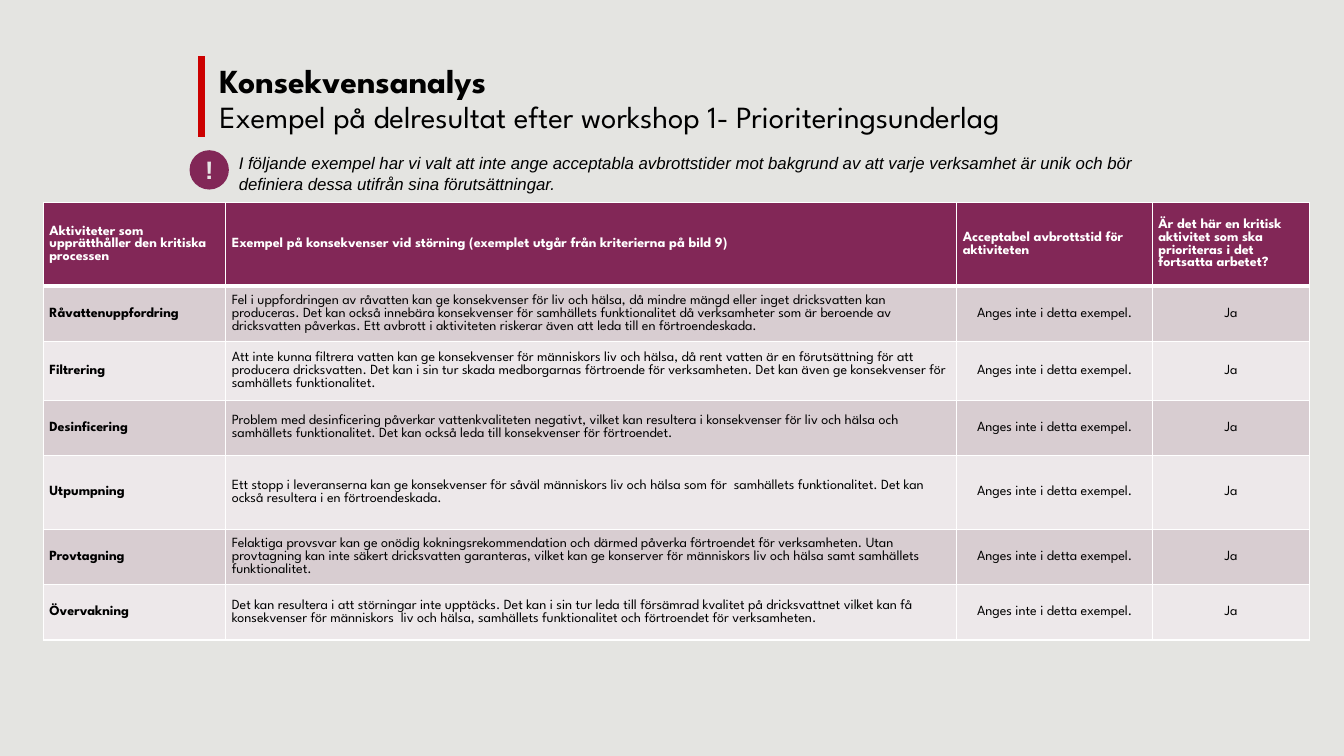
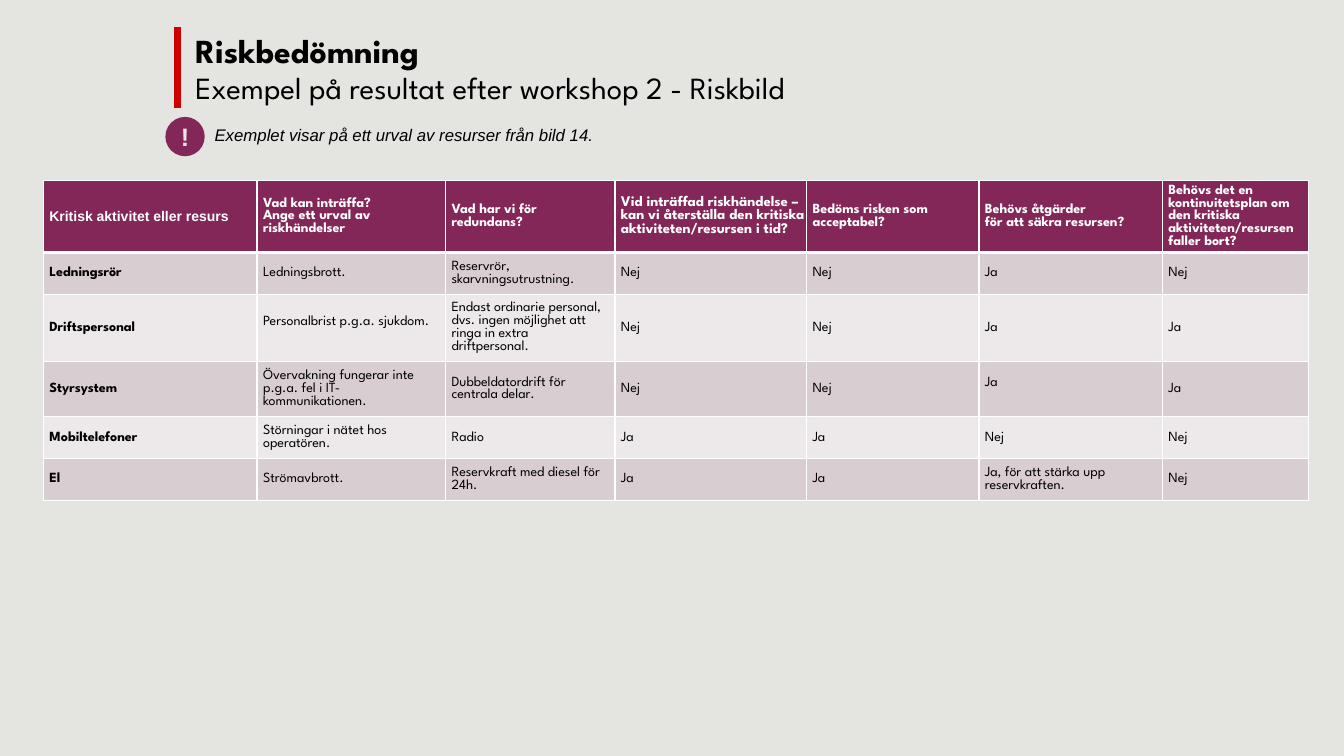
from dataclasses import dataclass
from typing import Optional

from pptx import Presentation
from pptx.dml.color import RGBColor as RGB
from pptx.enum.shapes import MSO_CONNECTOR as Conn, MSO_SHAPE as Shape
from pptx.enum.text import MSO_ANCHOR as Anchor, PP_ALIGN as Align
from pptx.oxml import parse_xml
from pptx.oxml.ns import nsdecls
from pptx.util import Inches, Pt

# Shared look
PLUM = RGB(0x82, 0x27, 0x57)
ROSE = RGB(0xD8, 0xCD, 0xD1)
PALE = RGB(0xED, 0xE8, 0xEA)
RED = RGB(0xCC, 0x00, 0x00)
GREY = RGB(0xE4, 0xE4, 0xE1)
LIGHT = RGB(0xE7, 0xE6, 0xE6)
WHITE = RGB(0xFF, 0xFF, 0xFF)
BLACK = RGB(0x00, 0x00, 0x00)
SANS = "League Spartan"
ARIAL = "Arial"


@dataclass
class Font:
    size: float
    name: str = SANS
    color: RGB = BLACK
    bold: bool = False
    italic: bool = False


HEAD = Font(10, color=WHITE, bold=True)
LABEL = Font(10, bold=True)
BODY = Font(10)
TITLE = Font(24, bold=True)
SUB = Font(22)
NOTE = Font(12, ARIAL, italic=True)
MARK = Font(18, ARIAL, LIGHT, bold=True)


@dataclass
class Top:
    x: float
    y: float
    title: str
    sub: str
    note: str
    note_y: float
    note_w: float
    mark_y: float


@dataclass
class Grid:
    y: float
    cols: list[float]
    rows: list[float]
    cells: list[list[str]]
    heads: dict[int, Font]  # header fonts that differ, by column
    mid: int  # first centred column
    lifts: set[tuple[int, int]]  # cells whose text sits higher


def style(para, font: Font) -> None:
    for run in para.runs:
        face = run.font
        face.name, face.size = font.name, Pt(font.size)
        face.bold, face.italic = font.bold, font.italic
        face.color.rgb = font.color


def add_box(slide, x: float, y: float, w: float, h: float, text: str):
    box = slide.shapes.add_textbox(Inches(x), Inches(y), Inches(w), Inches(h))
    frame = box.text_frame
    frame.word_wrap = True
    frame.text = text
    return frame


def add_top(slide, top: Top) -> None:
    # Title and subtitle
    frame = add_box(slide, top.x + 0.08, top.y + 0.03, 10.5, 0.8,
                    f"{top.title}\n{top.sub}")
    frame.vertical_anchor = Anchor.MIDDLE
    for para, font in zip(frame.paragraphs, (TITLE, SUB)):
        para.line_spacing = Pt(25)
        style(para, font)

    # Red bar
    x = Inches(top.x)
    bar = slide.shapes.add_connector(
        Conn.STRAIGHT, x, Inches(top.y), x, Inches(top.y + 0.8))
    bar.line.color.rgb = RED
    bar.line.width = Pt(5)
    bar._element.spPr.append(parse_xml(f"<a:effectLst {nsdecls('a')}/>"))

    # Note with its mark
    frame = add_box(slide, top.x + 0.27, top.note_y, top.note_w, 0.5, top.note)
    style(frame.paragraphs[0], NOTE)
    side = Inches(0.39)
    mark = slide.shapes.add_shape(
        Shape.OVAL, Inches(top.x - 0.12), Inches(top.mark_y), side, side)
    mark.shadow.inherit = False
    mark.fill.solid()
    mark.fill.fore_color.rgb = PLUM
    mark.line.fill.background()
    frame = mark.text_frame
    frame.margin_left = frame.margin_right = 0
    frame.margin_top = frame.margin_bottom = 0
    frame.vertical_anchor = Anchor.MIDDLE
    frame.text = "!"
    frame.paragraphs[0].alignment = Align.CENTER
    style(frame.paragraphs[0], MARK)


def add_edges(cell, row: int) -> None:
    widths = {"L": 1, "R": 1, "T": 3 if row == 1 else 1,
              "B": 3 if row == 0 else 1}
    props = cell._tc.get_or_add_tcPr()
    for edge, width in widths.items():
        props.append(parse_xml(
            f'<a:ln{edge} {nsdecls("a")} w="{Pt(width)}"><a:solidFill>'
            f'<a:srgbClr val="{WHITE}"/></a:solidFill></a:ln{edge}>'))


def fill_cell(cell, text: str, row: int, col: int, grid: Grid) -> None:
    is_head = row == 0
    add_edges(cell, row)
    cell.fill.solid()
    cell.fill.fore_color.rgb = PLUM if is_head else ROSE if row % 2 else PALE
    pad = 0.04 if is_head else 0.08
    lift = 0.12 if (row, col) in grid.lifts else 0
    cell.margin_left = Inches(0.06)
    cell.margin_right = Inches(0 if is_head else 0.06)
    cell.margin_top = Inches(pad)
    cell.margin_bottom = Inches(pad + lift)
    cell.vertical_anchor = Anchor.MIDDLE
    cell.text_frame.text = text
    if is_head:
        font = grid.heads.get(col, HEAD)
    else:
        font = BODY if col else LABEL
    for para in cell.text_frame.paragraphs:
        if not is_head and col >= grid.mid:
            para.alignment = Align.CENTER
        style(para, font)


def add_grid(slide, grid: Grid) -> None:
    table = slide.shapes.add_table(
        len(grid.rows), len(grid.cols), Inches(0.43), Inches(grid.y),
        Inches(sum(grid.cols)), Inches(sum(grid.rows))).table
    for col, width in zip(table.columns, grid.cols):
        col.width = Inches(width)
    for row, height in zip(table.rows, grid.rows):
        row.height = Inches(height)
    for r, texts in enumerate(grid.cells):
        for c, text in enumerate(texts):
            fill_cell(table.cell(r, c), text, r, c, grid)


# Slide 1: consequences
TOP_1 = Top(
    2, 0.56, "Konsekvensanalys",
    "Exempel på delresultat efter workshop 1- Prioriteringsunderlag",
    "I följande exempel har vi valt att inte ange acceptabla avbrottstider mot "
    "bakgrund av att varje verksamhet är unik och bör definiera dessa utifrån "
    "sina förutsättningar.", 1.47, 9.1, 1.49)
EFFECTS = {
    "Råvattenuppfordring":
        "Fel i uppfordringen av råvatten kan ge konsekvenser för liv och hälsa, "
        "då mindre mängd eller inget dricksvatten kan produceras. Det kan också "
        "innebära konsekvenser för samhällets funktionalitet då verksamheter som "
        "är beroende av dricksvatten påverkas. Ett avbrott i aktiviteten riskerar "
        "även att leda till en förtroendeskada.",
    "Filtrering":
        "Att inte kunna filtrera vatten kan ge konsekvenser för människors liv och "
        "hälsa, då rent vatten är en förutsättning för att producera dricksvatten. "
        "Det kan i sin tur skada medborgarnas förtroende för verksamheten. Det kan "
        "även ge konsekvenser för samhällets funktionalitet.",
    "Desinficering":
        "Problem med desinficering påverkar vattenkvaliteten negativt, vilket kan "
        "resultera i konsekvenser för liv och hälsa och samhällets funktionalitet. "
        "Det kan också leda till konsekvenser för förtroendet.",
    "Utpumpning":
        "Ett stopp i leveranserna kan ge konsekvenser för såväl människors liv och "
        "hälsa som för  samhällets funktionalitet. Det kan också resultera i en "
        "förtroendeskada.",
    "Provtagning":
        "Felaktiga provsvar kan ge onödig kokningsrekommendation och därmed påverka "
        "förtroendet för verksamheten. Utan provtagning kan inte säkert dricksvatten "
        "garanteras, vilket kan ge konserver för människors liv och hälsa samt "
        "samhällets funktionalitet.",
    "Övervakning":
        "Det kan resultera i att störningar inte upptäcks. Det kan i sin tur leda "
        "till försämrad kvalitet på dricksvattnet vilket kan få konsekvenser för "
        "människors  liv och hälsa, samhällets funktionalitet och förtroendet för "
        "verksamheten.",
}
GRID_1 = Grid(
    2.01, [1.81, 7.25, 1.94, 1.56], [0.83, 0.55, 0.58, 0.55, 0.73, 0.55, 0.55],
    [["Aktiviteter som upprätthåller den kritiska processen",
      "Exempel på konsekvenser vid störning (exemplet utgår från kriterierna "
      "på bild 9)",
      "Acceptabel avbrottstid för aktiviteten",
      "Är det här en kritisk aktivitet som ska prioriteras i det fortsatta "
      "arbetet?"]]
    + [[name, text, "Anges inte i detta exempel.", "Ja"]
       for name, text in EFFECTS.items()],
    heads={}, mid=2, lifts=set())

# Slide 2: risks
TOP_2 = Top(
    1.76, 0.27, "Riskbedömning", "Exempel på resultat efter workshop 2 - Riskbild",
    "Exemplet visar på ett urval av resurser från bild 14.", 1.19, 8, 1.16)
GRID_2 = Grid(
    1.79, [2.12, 1.87, 1.68, 1.9, 1.71, 1.82, 1.45],
    [0.71, 0.41, 0.66, 0.55, 0.41, 0.41],
    [["Kritisk aktivitet eller resurs",
      "Vad kan inträffa?\nAnge ett urval av riskhändelser",
      "Vad har vi för\nredundans?",
      "Vid inträffad riskhändelse – kan vi återställa den kritiska "
      "aktiviteten/resursen i tid?",
      "Bedöms risken som acceptabel?",
      "Behövs åtgärder\nför att säkra resursen?",
      "Behövs det en kontinuitetsplan om den kritiska aktiviteten/resursen\n"
      "faller bort?"],
     ["Ledningsrör", "Ledningsbrott.", "Reservrör, skarvningsutrustning.",
      "Nej", "Nej", "Ja", "Nej"],
     ["Driftspersonal", "Personalbrist p.g.a. sjukdom.",
      "Endast ordinarie personal, dvs. ingen möjlighet att ringa in extra "
      "driftpersonal.", "Nej", "Nej", "Ja", "Ja"],
     ["Styrsystem", "Övervakning fungerar inte p.g.a. fel i IT-kommunikationen.",
      "Dubbeldatordrift för centrala delar.", "Nej", "Nej", "Ja", "Ja"],
     ["Mobiltelefoner", "Störningar i nätet hos operatören.", "Radio",
      "Ja", "Ja", "Nej", "Nej"],
     ["El", "Strömavbrott.", "Reservkraft med diesel för 24h.",
      "Ja", "Ja", "Ja, för att stärka upp reservkraften.", "Nej"]],
    heads={0: Font(10, ARIAL, WHITE, True), 3: Font(10.5, SANS, WHITE, True)},
    mid=7, lifts={(2, 1), (3, 5)})


def main() -> None:
    deck = Presentation()
    deck.slide_width, deck.slide_height = Inches(13.33), Inches(7.5)
    back = deck.slide_master.background.fill
    back.solid()
    back.fore_color.rgb = GREY
    for top, grid in ((TOP_1, GRID_1), (TOP_2, GRID_2)):
        slide = deck.slides.add_slide(deck.slide_layouts[6])
        add_grid(slide, grid)
        add_top(slide, top)
    deck.save("out.pptx")


if __name__ == "__main__":
    main()
